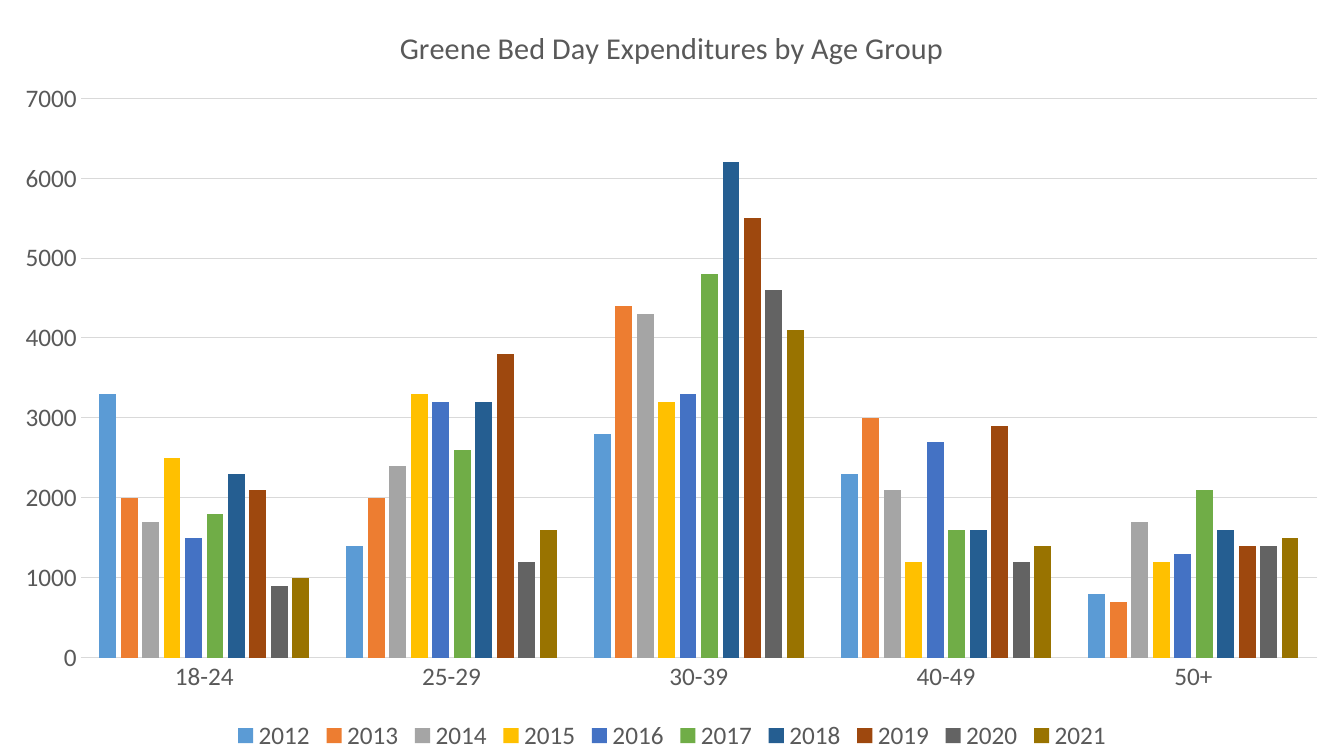
from lxml import etree
from pptx import Presentation
from pptx.chart.data import CategoryChartData
from pptx.dml.color import RGBColor
from pptx.enum.chart import XL_CHART_TYPE, XL_LEGEND_POSITION, XL_TICK_MARK
from pptx.oxml.ns import qn
from pptx.util import Inches, Pt

COLUMNS = XL_CHART_TYPE.COLUMN_CLUSTERED
BOTTOM = XL_LEGEND_POSITION.BOTTOM
NO_TICKS = XL_TICK_MARK.NONE
TEXT_GREY = "595959"
RULE_GREY = "D9D9D9"
TITLE = "Greene Bed Day Expenditures by Age Group"
AGE_GROUPS = ["18-24", "25-29", "30-39", "40-49", "50+"]
YEARS = [
    ("2012", "5B9BD5", [3300, 1400, 2800, 2300, 800]),
    ("2013", "ED7D31", [2000, 2000, 4400, 3000, 700]),
    ("2014", "A5A5A5", [1700, 2400, 4300, 2100, 1700]),
    ("2015", "FFC000", [2500, 3300, 3200, 1200, 1200]),
    ("2016", "4472C4", [1500, 3200, 3300, 2700, 1300]),
    ("2017", "70AD47", [1800, 2600, 4800, 1600, 2100]),
    ("2018", "255E91", [2300, 3200, 6200, 1600, 1600]),
    ("2019", "9E480E", [2100, 3800, 5500, 2900, 1400]),
    ("2020", "636363", [900, 1200, 4600, 1200, 1400]),
    ("2021", "997300", [1000, 1600, 4100, 1400, 1500]),
]


def rgb(code):
    return RGBColor.from_string(code)


def set_font(font, size, color=TEXT_GREY):
    font.name = "Calibri"
    font.size = Pt(size)
    font.bold = False
    font.color.rgb = rgb(color)


def set_rule(line):
    line.color.rgb = rgb(RULE_GREY)
    line.width = Pt(0.75)


def add_expenditure_chart(slide, width, height):
    data = CategoryChartData()
    data.categories = AGE_GROUPS
    for year, _, days in YEARS:
        data.add_series(year, days)
    chart = slide.shapes.add_chart(COLUMNS, 0, 0, width, height, data).chart
    set_font(chart.font, 18, "000000")
    return chart


def style_columns(chart):
    columns = chart.plots[0]
    columns.gap_width = 219
    columns.overlap = -27
    columns.vary_by_categories = False
    for series, (_, color, _) in zip(columns.series, YEARS):
        series.format.fill.solid()
        series.format.fill.fore_color.rgb = rgb(color)
        series.invert_if_negative = False


def style_axes(chart):
    ages, days = chart.category_axis, chart.value_axis
    for axis in (ages, days):
        axis.major_tick_mark = axis.minor_tick_mark = NO_TICKS
        set_font(axis.tick_labels.font, 18)
    set_rule(ages.format.line)
    days.format.line.fill.background()
    set_rule(days.major_gridlines.format.line)
    days.minimum_scale, days.maximum_scale, days.major_unit = 0, 7000, 1000


def add_title(chart):
    heading = chart.chart_title.text_frame
    heading.text = TITLE
    set_font(heading.paragraphs[0].font, 21.6)
    chart.chart_title.include_in_layout = False


def add_legend(chart):
    chart.has_legend = True
    chart.legend.position = BOTTOM
    chart.legend.include_in_layout = False
    set_font(chart.legend.font, 18)


def place_plot(chart, **fractions):
    plot_area = chart.plots[0]._element.getparent()
    for old in plot_area.findall(qn("c:layout")):
        plot_area.remove(old)
    layout = etree.Element(qn("c:layout"))
    manual = etree.SubElement(layout, qn("c:manualLayout"))
    settings = {"layoutTarget": "inner", "xMode": "edge", "yMode": "edge", **fractions}
    for tag, value in settings.items():
        etree.SubElement(manual, qn("c:" + tag)).set("val", str(value))
    plot_area.insert(0, layout)


def main():
    deck = Presentation()
    deck.slide_width, deck.slide_height = Inches(13.33), Inches(7.5)
    slide = deck.slides.add_slide(deck.slide_layouts[6])
    chart = add_expenditure_chart(slide, deck.slide_width, deck.slide_height)
    style_columns(chart)
    style_axes(chart)
    add_title(chart)
    add_legend(chart)
    place_plot(chart, x=0.06, y=0.13, w=0.92, h=0.74)
    deck.save("out.pptx")


if __name__ == "__main__":
    main()
